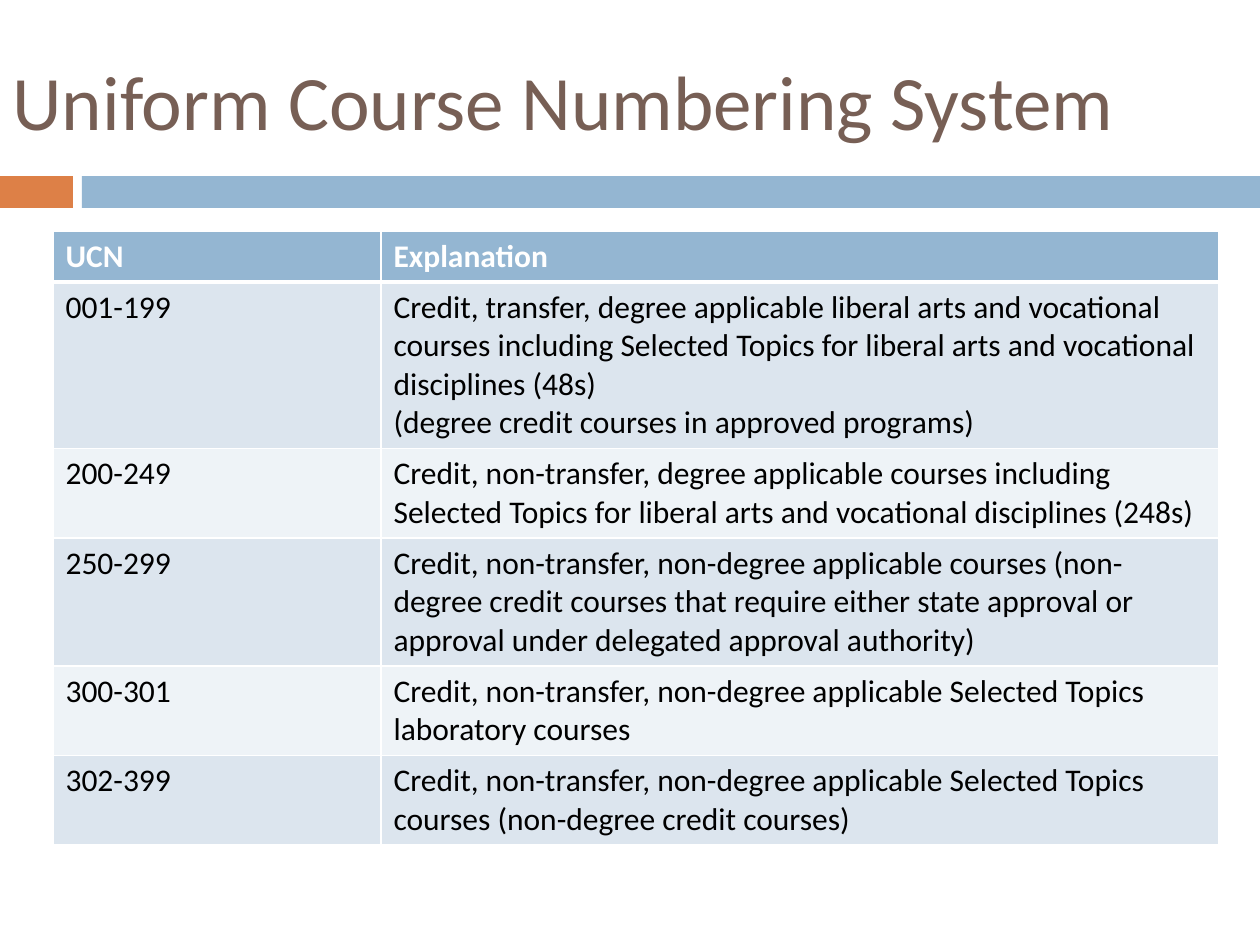
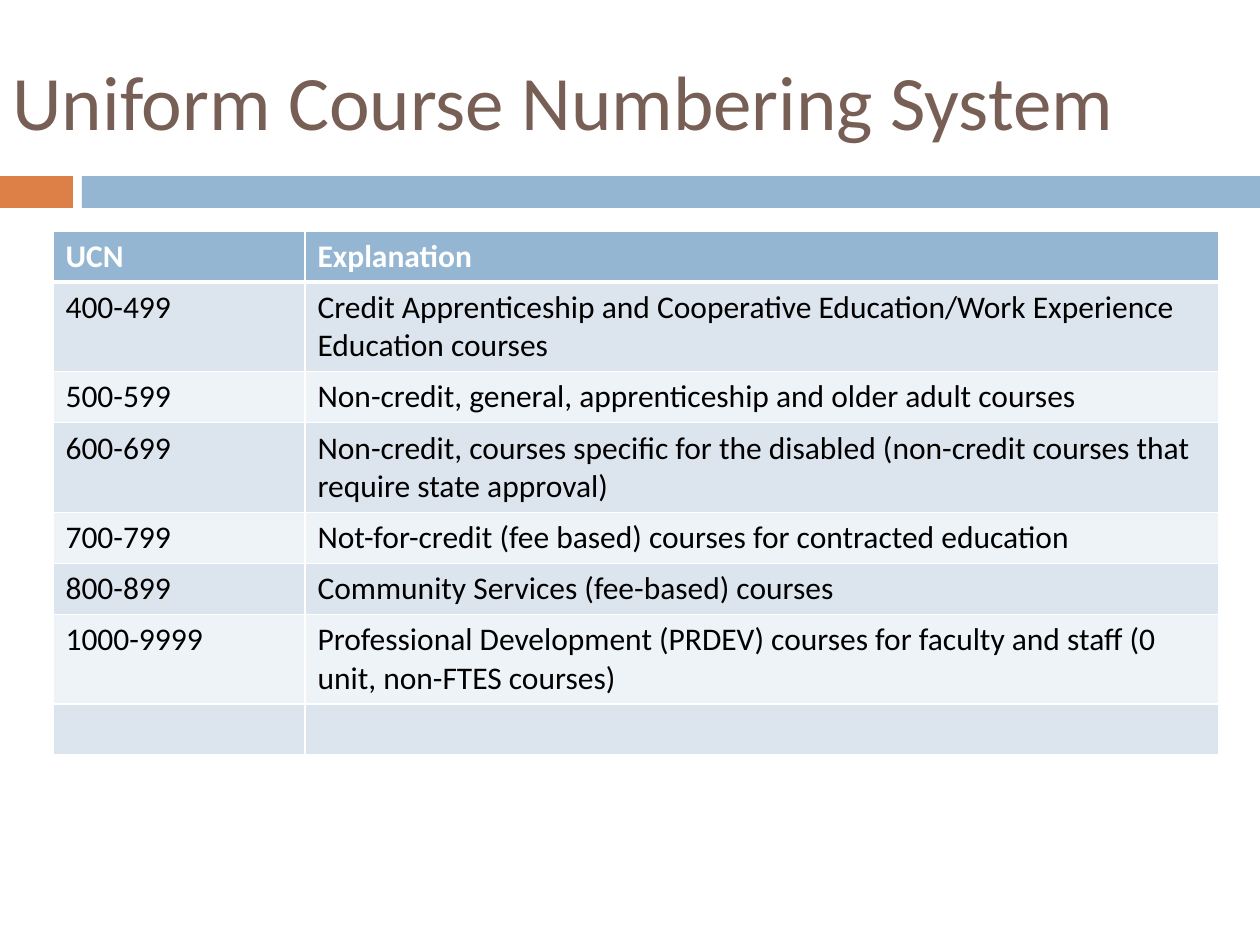
import pptx
import pptx.dml.color
import pptx.enum.shapes
import pptx.enum.text
import pptx.oxml
import pptx.oxml.ns
import pptx.util

TITLE = "Uniform Course Numbering System"
HEADER = ("UCN", "Explanation")
COURSE_TABLES = [
    {
        "column_widths": (328, 838),
        "rows": [
            ("001-199", "Credit, transfer, degree applicable liberal arts and vocational courses "
                        "including Selected Topics for liberal arts and vocational disciplines (48s)\n"
                        "(degree credit courses in approved programs)"),
            ("200-249", "Credit, non-transfer, degree applicable courses including Selected Topics "
                        "for liberal arts and vocational disciplines (248s)"),
            ("250-299", "Credit, non-transfer, non-degree applicable courses (non-degree credit courses "
                        "that require either state approval or approval under delegated approval authority)"),
            ("300-301", "Credit, non-transfer, non-degree applicable Selected Topics laboratory courses"),
            ("302-399", "Credit, non-transfer, non-degree applicable Selected Topics courses "
                        "(non-degree credit courses)"),
        ],
    },
    {
        "column_widths": (252, 914),
        "rows": [
            ("400-499", "Credit Apprenticeship and Cooperative Education/Work Experience Education courses"),
            ("500-599", "Non-credit, general, apprenticeship and older adult courses"),
            ("600-699", "Non-credit, courses specific for the disabled "
                        "(non-credit courses that require state approval)"),
            ("700-799", "Not-for-credit (fee based) courses for contracted education"),
            ("800-899", "Community Services (fee-based) courses"),
            ("1000-9999", "Professional Development (PRDEV) courses for faculty and staff "
                          "(0 unit, non-FTES courses)"),
            ("", ""),
        ],
    },
]

FONT = "Calibri"
WHITE, BLACK, BROWN = "FFFFFF", "000000", "775F55"
BLUE, ORANGE = "94B6D2", "DD8047"
ROW_FILLS = ("DCE5EE", "EEF3F7")

SLIDE_WIDTH, SLIDE_HEIGHT = 1260, 945
TITLE_BOX = (0, 32, SLIDE_WIDTH, 136)
BAND_TOP, BAND_HEIGHT = 176, 32
BANDS = [(0, 73, ORANGE), (82, SLIDE_WIDTH - 82, BLUE)]
TABLE_LEFT, TABLE_TOP, ROW_HEIGHT = 53, 231, 51
THIN, THICK = 1, 3


def px(length):
    return pptx.util.Emu(round(length * 914400 / 126))


def color(value):
    return pptx.dml.color.RGBColor.from_string(value)


def paint(fill, value):
    fill.solid()
    fill.fore_color.rgb = color(value)


def write(text_frame, text, *, size, ink, bold=False):
    """Put each line of the text in its own left-aligned paragraph."""
    text_frame.text = text
    for paragraph in text_frame.paragraphs:
        paragraph.alignment = pptx.enum.text.PP_ALIGN.LEFT
        for run in paragraph.runs:
            run.font.name = FONT
            run.font.size = pptx.util.Pt(size)
            run.font.bold = bold
            run.font.color.rgb = color(ink)


def add_borders(cell, top, bottom):
    properties = cell._tc.get_or_add_tcPr()
    for side, points in (("L", THIN), ("R", THIN), ("T", top), ("B", bottom)):
        properties.append(pptx.oxml.parse_xml(
            f'<a:ln{side} {pptx.oxml.ns.nsdecls("a")} w="{pptx.util.Pt(points)}">'
            f'<a:solidFill><a:srgbClr val="{WHITE}"/></a:solidFill></a:ln{side}>'))


def add_bands(slide):
    for left, width, fill in BANDS:
        band = slide.shapes.add_shape(
            pptx.enum.shapes.MSO_SHAPE.RECTANGLE,
            px(left), px(BAND_TOP), px(width), px(BAND_HEIGHT))
        band.shadow.inherit = False
        paint(band.fill, fill)
        band.line.fill.background()


def format_title(slide):
    title = slide.shapes.title
    title.left, title.top, title.width, title.height = map(px, TITLE_BOX)
    title.text_frame.vertical_anchor = pptx.enum.text.MSO_ANCHOR.MIDDLE
    write(title.text_frame, TITLE, size=44, ink=BROWN)


def add_course_table(slide, column_widths, rows):
    rows = [HEADER, *rows]
    table = slide.shapes.add_table(
        len(rows), len(HEADER), px(TABLE_LEFT), px(TABLE_TOP),
        px(sum(column_widths)), px(ROW_HEIGHT * len(rows))).table
    for column, width in zip(table.columns, column_widths):
        column.width = px(width)
    for row_index, row in enumerate(rows):
        is_header = row_index == 0
        fill = BLUE if is_header else ROW_FILLS[(row_index - 1) % 2]
        for column_index, text in enumerate(row):
            cell = table.cell(row_index, column_index)
            write(cell.text_frame, text, size=18,
                  ink=WHITE if is_header else BLACK, bold=is_header)
            add_borders(cell, top=THICK if row_index == 1 else THIN,
                        bottom=THICK if is_header else THIN)
            paint(cell.fill, fill)


def main():
    presentation = pptx.Presentation()
    presentation.slide_width = px(SLIDE_WIDTH)
    presentation.slide_height = px(SLIDE_HEIGHT)
    title_only = presentation.slide_layouts.get_by_name("Title Only")
    for course_table in COURSE_TABLES:
        slide = presentation.slides.add_slide(title_only)
        add_bands(slide)
        format_title(slide)
        add_course_table(slide, **course_table)
    presentation.save("out.pptx")


if __name__ == "__main__":
    main()
